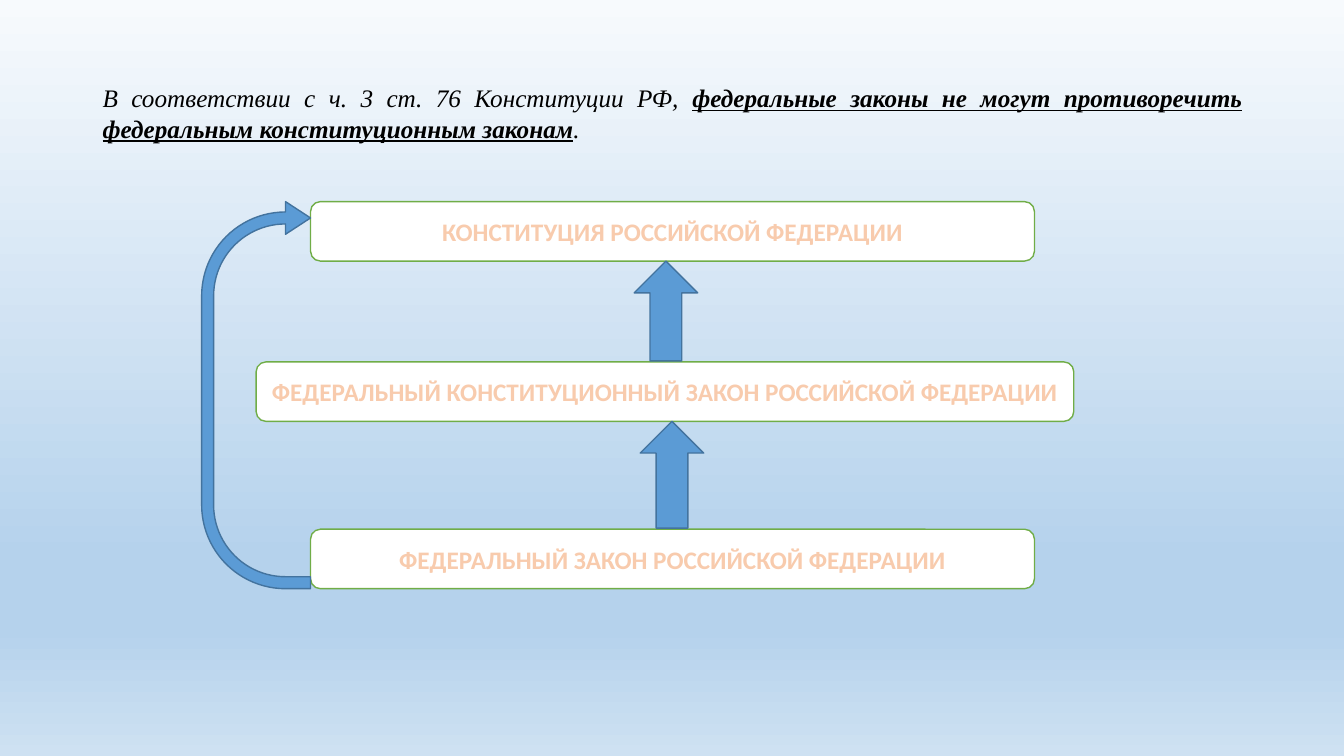
from pptx import Presentation
from pptx.dml.color import RGBColor
from pptx.enum.shapes import MSO_SHAPE
from pptx.enum.text import MSO_ANCHOR, MSO_AUTO_SIZE, PP_ALIGN
from pptx.oxml import parse_xml
from pptx.oxml.ns import nsdecls, qn
from pptx.util import Inches, Pt

STOPS = [(0, "F7FAFD"), (74, "B5D2EC"), (83, "B5D2EC"), (100, "CEE1F2")]
LAWS = [
    (3.08, 2, 7.18, "КОНСТИТУЦИЯ РОССИЙСКОЙ ФЕДЕРАЦИИ"),
    (2.54, 3.59, 8.11, "ФЕДЕРАЛЬНЫЙ КОНСТИТУЦИОННЫЙ ЗАКОН РОССИЙСКОЙ ФЕДЕРАЦИИ"),
    (3.08, 5.25, 7.18, "ФЕДЕРАЛЬНЫЙ ЗАКОН РОССИЙСКОЙ ФЕДЕРАЦИИ"),
]


def paint(color, value):
    """Set a colour from a hex string."""
    color.rgb = RGBColor.from_string(value)


def add_back(slide):
    """Fill the background with a vertical gradient."""
    fill = slide.background.fill
    fill.gradient()
    fill.gradient_angle = 270
    stops = next(slide.element.iter(qn("a:gsLst")))
    for old in list(stops):
        stops.remove(old)
    for place, value in STOPS:
        stops.append(parse_xml(
            f'<a:gs {nsdecls("a")} pos="{place * 1000}">'
            f'<a:srgbClr val="{value}"/></a:gs>'))


def set_font(para, name, color):
    """Set the face, size and colour of a paragraph."""
    para.font.name = name
    para.font.size = Pt(18)
    paint(para.font.color, color)


def add_shape(slide, kind, box, fill, line):
    """Add a filled and outlined shape without shadow."""
    shape = slide.shapes.add_shape(kind, *map(Inches, box))
    shape.shadow.inherit = False
    shape.fill.solid()
    paint(shape.fill.fore_color, fill)
    paint(shape.line.color, line)
    shape.line.width = Pt(1)
    return shape


def add_law(slide, left, top, width, text):
    """Add a rounded box with the name of a law."""
    shape = add_shape(slide, MSO_SHAPE.ROUNDED_RECTANGLE,
                      (left, top, width, 0.59), "FFFFFF", "70AD47")
    shape.text_frame.word_wrap = True
    shape.text_frame.vertical_anchor = MSO_ANCHOR.MIDDLE
    para = shape.text_frame.paragraphs[0]
    para.text = text
    para.alignment = PP_ALIGN.CENTER
    set_font(para, "Calibri", "F8CBAD")
    para.font.bold = True
    props = next(shape.element.iter(qn("a:defRPr")))
    props.insert(0, parse_xml(
        f'<a:ln {nsdecls("a")} w="{Pt(1.75)}"><a:solidFill>'
        '<a:srgbClr val="ED7D31"/></a:solidFill></a:ln>'))


def add_arrow(slide, kind, *box):
    """Add a blue block arrow."""
    return add_shape(slide, kind, box, "5B9BD5", "43739E")


def add_intro(slide):
    """Add the opening sentence with its stressed part."""
    box = slide.shapes.add_textbox(*map(Inches, (0.92, 0.77, 11.5, 0.71)))
    frame = box.text_frame
    frame.word_wrap = True
    frame.auto_size = MSO_AUTO_SIZE.SHAPE_TO_FIT_TEXT
    para = frame.paragraphs[0]
    para.alignment = PP_ALIGN.JUSTIFY
    set_font(para, "Times New Roman", "000000")
    para.font.italic = True
    para.add_run().text = "В соответствии с ч. 3 ст. 76 Конституции РФ, "
    stress = para.add_run()
    stress.text = ("федеральные законы не могут противоречить "
                   "федеральным конституционным законам")
    stress.font.bold = True
    stress.font.underline = True
    para.add_run().text = "."


def main():
    """Build and save the slide."""
    deck = Presentation()
    deck.slide_width = Inches(13.33)
    deck.slide_height = Inches(7.5)
    slide = deck.slides.add_slide(deck.slide_layouts[6])
    add_back(slide)
    add_intro(slide)
    for law in LAWS:
        add_law(slide, *law)
    add_arrow(slide, MSO_SHAPE.UP_ARROW, 6.29, 2.59, 0.63, 0.99)
    add_arrow(slide, MSO_SHAPE.UP_ARROW, 6.35, 4.18, 0.63, 1.06)
    turn = add_arrow(slide, MSO_SHAPE.U_TURN_ARROW, 0.62, 3.38, 3.84, 1.08)
    turn.rotation = 270
    for spot, value in enumerate((0.11, 0.15, 0.23, 0.78, 1)):
        turn.adjustments[spot] = value
    deck.save("out.pptx")


if __name__ == "__main__":
    main()
